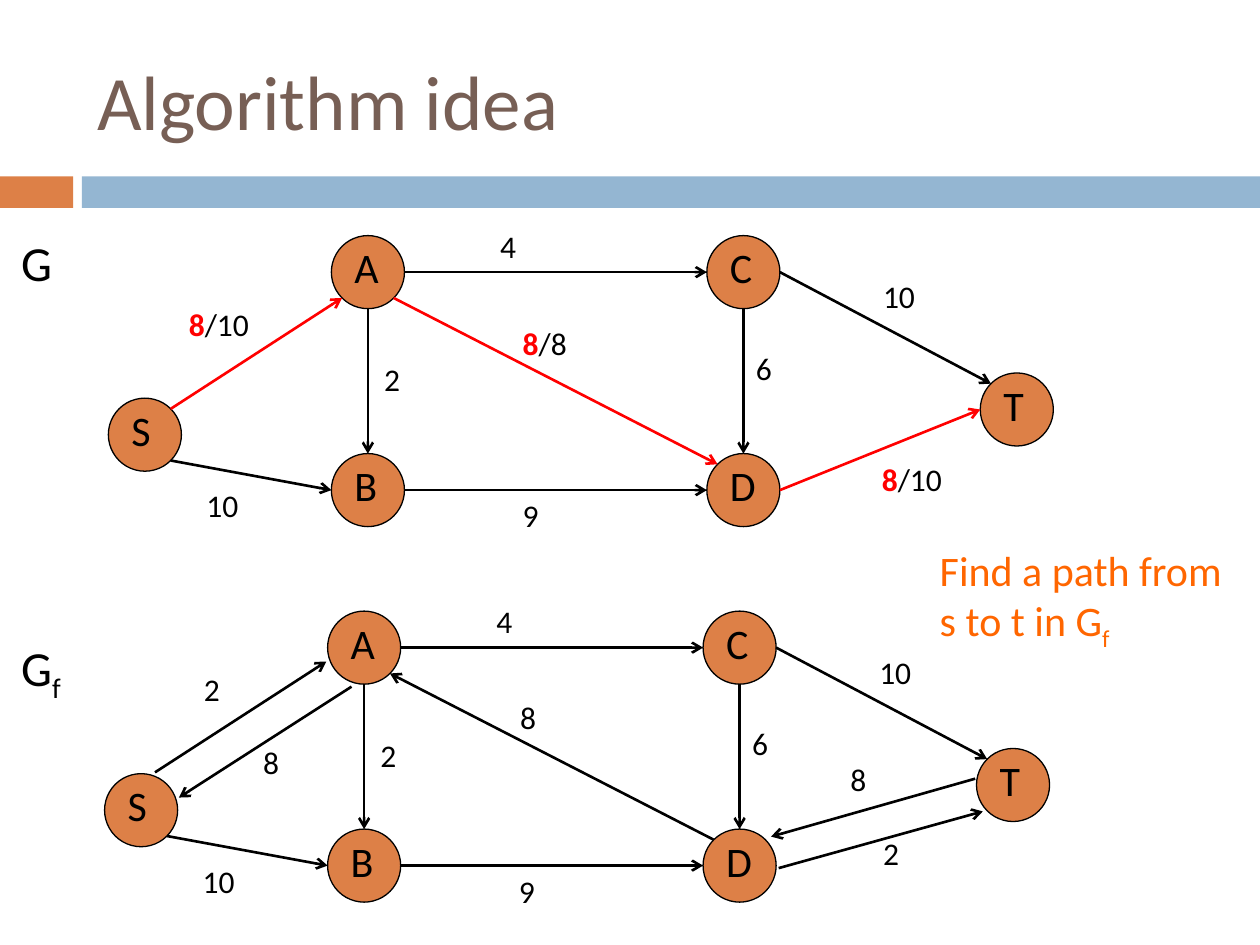
from math import cos, radians, sin

from lxml.etree import SubElement
from pptx import Presentation
from pptx.dml.color import RGBColor
from pptx.enum.shapes import MSO_CONNECTOR, MSO_SHAPE
from pptx.enum.text import MSO_ANCHOR, PP_ALIGN
from pptx.oxml.ns import qn
from pptx.util import Inches, Pt

COLORS = {
    "orange": "DD8047",
    "blue": "94B6D2",
    "title": "775F55",
    "hint": "FF6600",
    "red": "FF0000",
    "black": "000000",
}
SIZE = 0.58  # node diameter

# Positions below are relative to the top left corner of a graph.
NODES = {
    "S": (0, 1.29), "A": (1.77, 0), "B": (1.77, 1.73),
    "C": (4.75, 0), "D": (4.75, 1.73), "T": (6.92, 1.09),
}
# Directions on a node's rim, in degrees clockwise from the right.
RIM = {"E": 0, "SE": 45, "S": 90, "SW": 135, "W": 180, "NW": 225, "N": 270, "NE": 315}

# An edge joins two ends, each a (node, rim direction) or a plain point.
EDGES = [
    (("S", "SE"), ("B", "W"), "black"),
    (("B", "E"), ("D", "W"), "black"),
    (("A", "S"), ("B", "N"), "black"),
    (("A", "E"), ("C", "W"), "black"),
    (("C", "S"), ("D", "N"), "black"),
    (("C", "E"), ("T", "NW"), "black"),
]
FLOW_EDGES = [
    (("S", "NE"), ("A", "SW"), "red"),
    (("A", "SE"), ("D", "NW"), "red"),
    (("D", "E"), ("T", "W"), "red"),
]
REST_EDGES = [
    (("D", "NW"), ("A", "SE"), "black"),
    ((0.4, 1.28), (1.76, 0.4), "black"),
    ((1.96, 0.6), (0.59, 1.48), "black"),
    ((5.35, 2.04), (6.97, 1.59), "black"),
    ((6.91, 1.33), (5.29, 1.79), "black"),
]
LABELS = [
    ("10", 0.68, 1.94), ("9", 3.19, 2.02), ("4", 3.01, -0.12),
    ("2", 2.09, 0.94), ("6", 5.04, 0.85), ("10", 6.05, 0.28),
]
FLOW_LABELS = [("8/10", 0.54, 0.5), ("8/8", 3.19, 0.65), ("8/10", 6.04, 1.73)]
REST_LABELS = [
    ("2", 0.69, 0.42), ("8", 1.16, 1), ("8", 3.2, 0.64),
    ("8", 5.82, 1.13), ("2", 6.08, 1.72),
]


def rgb(name):
    return RGBColor.from_string(COLORS[name])


def write(frame, text, size=18, color="black", sub="", lead=""):
    """Fill a frame with text, after a bold red lead and before a subscript."""
    frame.word_wrap = True
    para = frame.paragraphs[0]
    para.alignment = PP_ALIGN.LEFT
    for index, line in enumerate(text.split("\n")):
        if index:
            para.add_line_break()
        parts = [(lead, "red"), (line, color)] if lead else [(line, color)]
        for part, shade in parts:
            add_run(para, part, size, shade, bold=shade == "red")
    if sub:
        run = add_run(para, sub, size, color)
        run.font._element.set("baseline", "-25000")


def add_run(para, text, size, color, bold=False):
    run = para.add_run()
    run.text = text
    run.font.name = "Calibri"
    run.font.size = Pt(size)
    run.font.bold = bold
    run.font.color.rgb = rgb(color)
    return run


def add_text(slide, box, text, **fmt):
    shape = slide.shapes.add_textbox(*map(Inches, box))
    write(shape.text_frame, text, **fmt)


def add_shape(slide, kind, box, fill):
    shape = slide.shapes.add_shape(kind, *map(Inches, box))
    shape.shadow.inherit = False
    shape.fill.solid()
    shape.fill.fore_color.rgb = rgb(fill)
    shape.line.fill.background()
    return shape


def add_node(slide, box, name):
    node = add_shape(slide, MSO_SHAPE.OVAL, box, "orange")
    node.line.color.rgb = rgb("black")
    node.line.width = Pt(0.75)
    frame = node.text_frame
    frame.vertical_anchor = MSO_ANCHOR.MIDDLE
    frame.margin_left = Inches(0.1)
    frame.margin_right = frame.margin_top = 0
    frame.margin_bottom = Inches(0.08)
    write(frame, name, size=24)


def add_arrow(slide, start, end, color):
    line = slide.shapes.add_connector(
        MSO_CONNECTOR.STRAIGHT, *map(Inches, (*start, *end)))
    line.line.color.rgb = rgb(color)
    line.line.width = Pt(1.5)
    SubElement(line.line._get_or_add_ln(), qn("a:tailEnd"), type="arrow")
    SubElement(line._element.spPr, qn("a:effectLst"))


def find_end(end, left, top):
    """Turn an edge's end into a point on the slide."""
    first, second = end
    if first in NODES:
        x, y = NODES[first]
        turn = radians(RIM[second])
        first = x + SIZE / 2 * (1 + cos(turn))
        second = y + SIZE / 2 * (1 + sin(turn))
    return left + first, top + second


def add_graph(slide, left, top, edges, labels):
    for name, (x, y) in NODES.items():
        add_node(slide, (left + x, top + y, SIZE, SIZE), name)
    for start, end, color in EDGES + edges:
        add_arrow(slide, find_end(start, left, top), find_end(end, left, top), color)
    for text, x, y in LABELS + labels:
        flow, slash, limit = text.partition("/")
        add_text(slide, (left + x, top + y, 0.85, 0.4),
                 slash + limit if slash else text, lead=flow if slash else "")


def add_header(slide, text):
    add_shape(slide, MSO_SHAPE.RECTANGLE, (0, 1.4, 0.58, 0.25), "orange")
    add_shape(slide, MSO_SHAPE.RECTANGLE, (0.65, 1.4, 9.35, 0.25), "blue")
    title = slide.shapes.title
    title.left, title.top = Inches(0.67), Inches(0.25)
    title.width, title.height = Inches(8.92), Inches(1.08)
    title.text_frame.vertical_anchor = MSO_ANCHOR.MIDDLE
    write(title.text_frame, text, size=44, color="title")


def main():
    deck = Presentation()
    deck.slide_width, deck.slide_height = Inches(10), Inches(7.5)
    slide = deck.slides.add_slide(deck.slide_layouts[5])
    add_header(slide, "Algorithm idea")
    add_text(slide, (0.07, 1.8, 0.88, 0.57), "G", size=28)
    add_graph(slide, 0.86, 1.87, FLOW_EDGES, FLOW_LABELS)
    add_text(slide, (0.07, 5.01, 0.88, 0.57), "G", size=28, sub="f")
    add_graph(slide, 0.83, 4.85, REST_EDGES, REST_LABELS)
    add_text(slide, (7.36, 4.27, 2.72, 0.91), "Find a path from\ns to t in G",
             size=24, color="hint", sub="f")
    deck.save("out.pptx")


if __name__ == "__main__":
    main()
